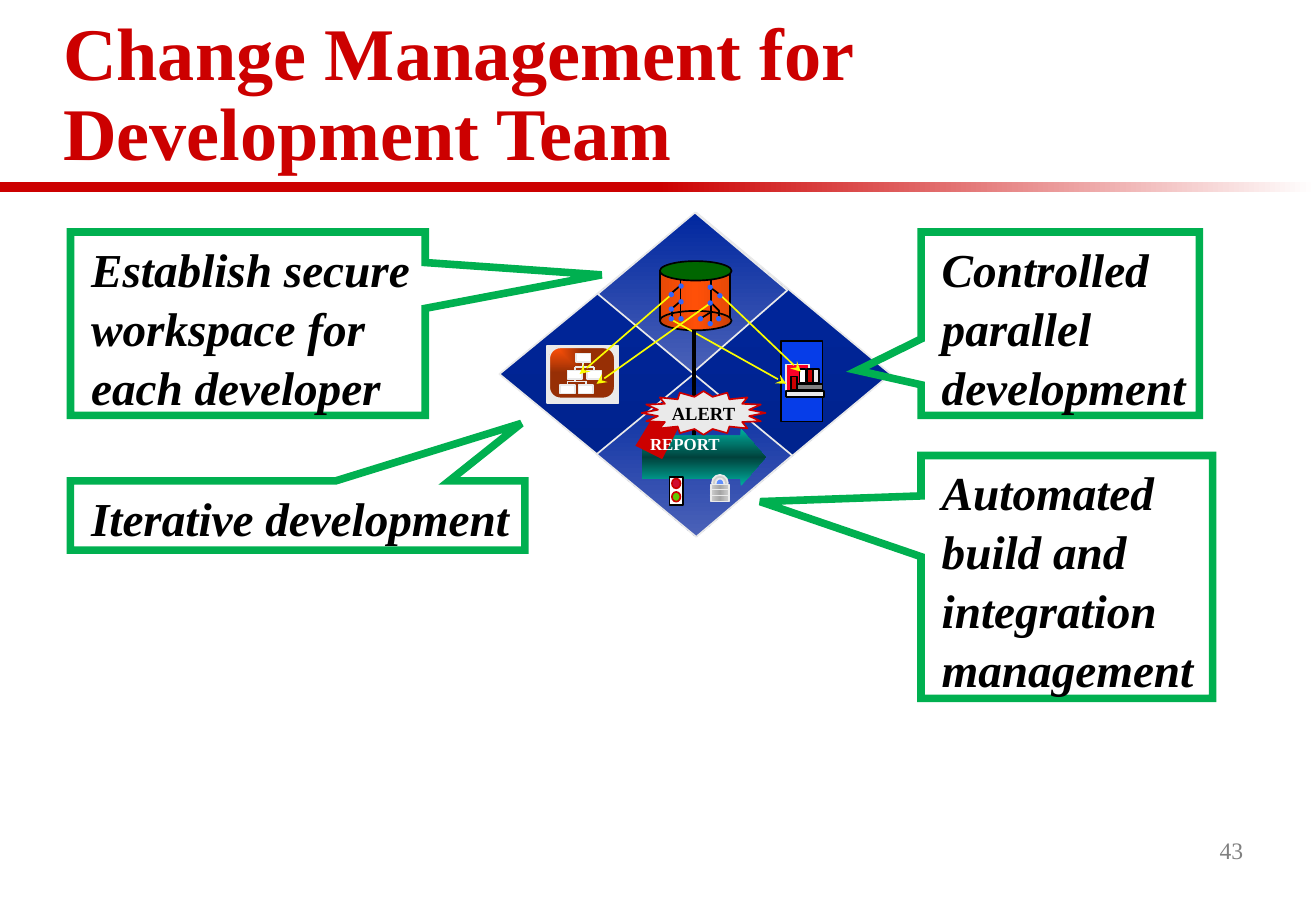
from copy import deepcopy

from lxml import etree
from pptx import Presentation
from pptx.dml.color import RGBColor
from pptx.enum.shapes import MSO_CONNECTOR, MSO_SHAPE
from pptx.enum.text import MSO_ANCHOR, MSO_AUTO_SIZE, PP_ALIGN
from pptx.oxml.ns import qn
from pptx.util import Inches, Pt

RECT, OVAL, ROUNDED = MSO_SHAPE.RECTANGLE, MSO_SHAPE.OVAL, MSO_SHAPE.ROUNDED_RECTANGLE
ARROW, STAR, CALLOUT = MSO_SHAPE.RIGHT_ARROW, MSO_SHAPE.STAR_16_POINT, MSO_SHAPE.RECTANGULAR_CALLOUT
STRAIGHT = MSO_CONNECTOR.STRAIGHT
TOP, MIDDLE, BOTTOM = MSO_ANCHOR.TOP, MSO_ANCHOR.MIDDLE, MSO_ANCHOR.BOTTOM
LEFT, CENTER, RIGHT = PP_ALIGN.LEFT, PP_ALIGN.CENTER, PP_ALIGN.RIGHT
TOP_SIDE, BOTTOM_SIDE = 0, 2
ACROSS, DOWN = 0, 270

# The slide is a grid of 1083 columns by 750 rows
COLUMNS, ROWS, CELL = 1083, 750, Inches(0.01)


class Theme:
    font = "Times New Roman"
    title_size, callout_size, page_size, alert_size, report_size = 44, 28, 14, 11, 10
    red, white, black, pale, gray = "CC0000", "FFFFFF", "000000", "EAEAEA", "808080"
    green, yellow, node_blue, panel_blue = "00B050", "FAFD00", "3365FB", "063DE8"
    lid_green, book_red, lock_gray, keyhole = "006600", "FC0128", "CECECE", "618FFD"
    stop_red, go_green = "CF0E30", "60C900"
    diamond = ("00279F", "002188")
    quadrant = ("00279F", "4B62B8")
    drum = ("E74907", "FF5008", "E74907")
    drum_base = ("CC4006", "FF5008", "CC4006")
    screen = ("FF5008", "972F05")
    process = ("00AE9E", "00423C", "00AE9E")
    lock_body = ("CECECE", "A5A5A5", "CECECE")


prs = Presentation()
prs.slide_width, prs.slide_height = COLUMNS * CELL, ROWS * CELL
slide = prs.slides.add_slide(prs.slide_layouts[6])


def draw(kind, area, fill=None, edge=None, width=1, angle=DOWN):
    """Draw a preset over (column, row, width, height), or an outline through points if kind is None."""
    if kind is None:
        outline = slide.shapes.build_freeform(*area[0], scale=CELL)
        outline.add_line_segments(area[1:], close=True)
        shape = outline.convert_to_shape()
    else:
        shape = slide.shapes.add_shape(kind, *(v * CELL for v in area))
    shape.shadow.inherit = False
    if fill is None:
        shape.fill.background()
    elif isinstance(fill, str):
        shape.fill.solid()
        shape.fill.fore_color.rgb = RGBColor.from_string(fill)
    else:
        shape.fill.gradient()
        shape.fill.gradient_angle = angle
        stops = shape.element.spPr.find(qn("a:gradFill")).find(qn("a:gsLst"))
        for _ in fill[2:]:
            stops.append(deepcopy(stops[0]))
        for i, (stop, color) in enumerate(zip(shape.fill.gradient_stops, fill)):
            stop.position = i / (len(fill) - 1)
            stop.color.rgb = RGBColor.from_string(color)
    if edge:
        shape.line.color.rgb = RGBColor.from_string(edge)
        shape.line.width = Pt(width)
    else:
        shape.line.fill.background()
    return shape


def link(start, end, color, width=1, arrow=False):
    """Join two grid points with a straight line."""
    line = slide.shapes.add_connector(STRAIGHT, *(v * CELL for v in (*start, *end)))
    line.line.color.rgb = RGBColor.from_string(color)
    line.line.width = Pt(width)
    properties = line.element.spPr
    if arrow:
        etree.SubElement(properties.find(qn("a:ln")), qn("a:tailEnd"), type="stealth")
    etree.SubElement(properties, qn("a:effectLst"))
    return line


# Rule under the title
draw(RECT, (0, 150, 542, 8), Theme.red)
draw(RECT, (541, 150, 542, 8), (Theme.red, Theme.white), angle=ACROSS)

# Diamond, its upper and lower quadrants, and the database drum
draw(None, [(411, 308), (573, 175), (733, 308), (573, 441)], Theme.diamond, Theme.pale)
draw(RECT, (643, 281, 34, 66), Theme.panel_blue, Theme.black)
draw(None, [(492, 242), (572, 175), (648, 239), (570, 307)], Theme.quadrant, Theme.pale)
draw(RECT, (543, 224, 58, 40), Theme.drum, Theme.black, angle=ACROSS)
draw(OVAL, (543, 256, 59, 16), Theme.drum_base, Theme.black, angle=ACROSS)
draw(None, [(491, 374), (571, 308), (652, 375), (573, 442)], Theme.quadrant, Theme.pale)

# Organisation tree on the left
draw(RECT, (450, 285, 59, 47), Theme.pale, Theme.pale)
screen = draw(ROUNDED, (452, 286, 54, 42), Theme.screen, Theme.pale)
screen.adjustments[0] = 0.22
screen_fill = screen.element.spPr.find(qn("a:gradFill"))
screen_fill.remove(screen_fill.find(qn("a:lin")))
corner = etree.SubElement(screen_fill, qn("a:path"), **{"path": "rect"})
etree.SubElement(corner, qn("a:fillToRect"), r="100000", b="100000")

NODE_W, NODE_H = 12, 7
UPPER_BAR, LOWER_BAR = 302, 314
for first, last, row in [(473, 489, UPPER_BAR), (467, 482, LOWER_BAR)]:
    link((first, row), (last, row), Theme.pale)
for column, row, joints in [
    (474, 291, [(BOTTOM_SIDE, UPPER_BAR)]),
    (467, 305, [(TOP_SIDE, UPPER_BAR), (BOTTOM_SIDE, LOWER_BAR)]),
    (483, 305, [(TOP_SIDE, UPPER_BAR)]),
    (461, 317, [(TOP_SIDE, LOWER_BAR)]),
    (476, 317, [(TOP_SIDE, LOWER_BAR)]),
]:
    node = draw(RECT, (column, row, NODE_W, NODE_H), Theme.white, Theme.pale)
    middle = column + NODE_W // 2
    for side, bar in joints:
        edge_row = row + (NODE_H if side == BOTTOM_SIDE else 0)
        link((middle, edge_row), (middle, bar), Theme.pale).begin_connect(node, side)

# Bookshelf on the right
draw(RECT, (647, 300, 19, 27), Theme.book_red, Theme.pale)
draw(RECT, (647, 322, 31, 5), Theme.pale, Theme.black)
for column, row, color in [(651, 310, Theme.red), (658, 304, Theme.white),
                           (664, 304, Theme.red), (669, 304, Theme.pale)]:
    draw(RECT, (column, row, 5, 11), color, Theme.black)

# Check-outs from the database to both sides
for start, end in [((552, 243), (477, 308)), ((584, 250), (491, 316)),
                   ((594, 244), (659, 306)), ((554, 264), (647, 316))]:
    link(start, end, Theme.yellow, arrow=True)

# Version branches inside the drum
DOT = 3
for branches, versions in [
    ([((560, 228), (560, 264)), ((560, 235), (553, 241)), ((560, 248), (553, 254)),
      ((553, 254), (553, 261))],
     [(559, 234), (559, 247), (559, 261), (551, 253), (551, 261), (551, 241)]),
    ([((585, 229), (585, 265)), ((585, 237), (593, 243)), ((585, 249), (592, 256)),
      ((592, 256), (592, 262)), ((585, 257), (577, 262))],
     [(591, 242), (575, 261), (583, 265), (583, 248), (583, 235), (590, 261)]),
]:
    for start, end in branches:
        link(start, end, Theme.black)
    for version in versions:
        draw(OVAL, (*version, DOT, DOT), Theme.node_blue, Theme.node_blue)

link((571, 272), (571, 369), Theme.black, 2)
draw(RECT, (656, 316, 21, 5), Theme.gray, Theme.black)
draw(OVAL, (543, 215, 59, 16), Theme.lid_green, Theme.black)

# Process arrow with padlock, report and traffic light
process = draw(ARROW, (528, 353, 102, 47), Theme.process)
process.adjustments[0], process.adjustments[1] = 0.75, 0.43
draw(OVAL, (586, 391, 13, 13), Theme.lock_gray, Theme.pale)
draw(OVAL, (589, 394, 7, 8), Theme.keyhole, Theme.pale)
draw(RECT, (585, 399, 15, 14), Theme.lock_body, Theme.pale, angle=ACROSS)
for row in (403, 408):
    link((584, row), (600, row), Theme.pale)
draw(None, [(537, 344), (559, 351), (545, 378), (523, 367)], Theme.red)
report = draw(RECT, (526, 352, 76, 26))
draw(RECT, (551, 393, 11, 23), Theme.white, Theme.black)
for row, color in [(394, Theme.stop_red), (405, Theme.go_green)]:
    draw(OVAL, (553, row, 7, 8), color, Theme.red)
alert = draw(STAR, (528, 322, 102, 36), Theme.pale, Theme.red)
alert.adjustments[0] = 0.375

page, title = [slide.shapes.add_textbox(*(v * CELL for v in area))
               for area in [(812, 675, 221, 50), (42, 29, 992, 121)]]

# holder, text, size, colour, bold, alignment, anchor, wrap, side margin, top margin, line spacing
labels = [
    (report, "REPORT", Theme.report_size, Theme.white, True, LEFT, TOP, False, 9, 5, 1),
    (alert, "ALERT", Theme.alert_size, Theme.black, True, CENTER, MIDDLE, True, 0, 0, 1),
    (page, "43", Theme.page_size, Theme.gray, False, RIGHT, MIDDLE, True, 10, 5, 1),
    (title, "Change Management for Development Team", Theme.title_size, Theme.red, True,
     LEFT, BOTTOM, True, 10, 5, 0.9),
]

# Callouts around the diamond
callouts = []
for area, pointer, text, wrap in [
    ((58, 191, 292, 151), (0.997, -0.266), "Establish secure\nworkspace for\neach developer", False),
    ((58, 396, 374, 57), (0.492, -1.331), "Iterative development", False),
    ((758, 191, 229, 151), (-0.729, 0.255), "Controlled\nparallel\ndevelopment", False),
    ((758, 375, 240, 200), (-1.052, -0.31), "Automated build and integration management", True),
]:
    callout = draw(CALLOUT, area, edge=Theme.green, width=4.5)
    callout.adjustments[0], callout.adjustments[1] = pointer
    etree.SubElement(callout.element.spPr.find(qn("a:ln")), qn("a:miter"), lim="800000")
    callout.text_frame.auto_size = MSO_AUTO_SIZE.SHAPE_TO_FIT_TEXT
    callouts.append(callout)
    labels.append((callout, text, Theme.callout_size, Theme.black, True, LEFT, TOP, wrap, 10, 5, 1.04))

for holder, text, size, color, bold, align, anchor, wrap, side, top, spacing in labels:
    frame = holder.text_frame
    frame.text = text
    frame.word_wrap = wrap
    frame.vertical_anchor = anchor
    frame.margin_left = frame.margin_right = side * CELL
    frame.margin_top = frame.margin_bottom = top * CELL
    for paragraph in frame.paragraphs:
        paragraph.alignment = align
        paragraph.line_spacing = spacing
        for run in paragraph.runs:
            run.font.name, run.font.size, run.font.bold = Theme.font, Pt(size), bold
            run.font.color.rgb = RGBColor.from_string(color)

for callout in callouts:
    callout.text_frame.margin_left = 17 * CELL
    for paragraph in callout.text_frame.paragraphs:
        paragraph.runs[0].font.italic = True

prs.save("out.pptx")
